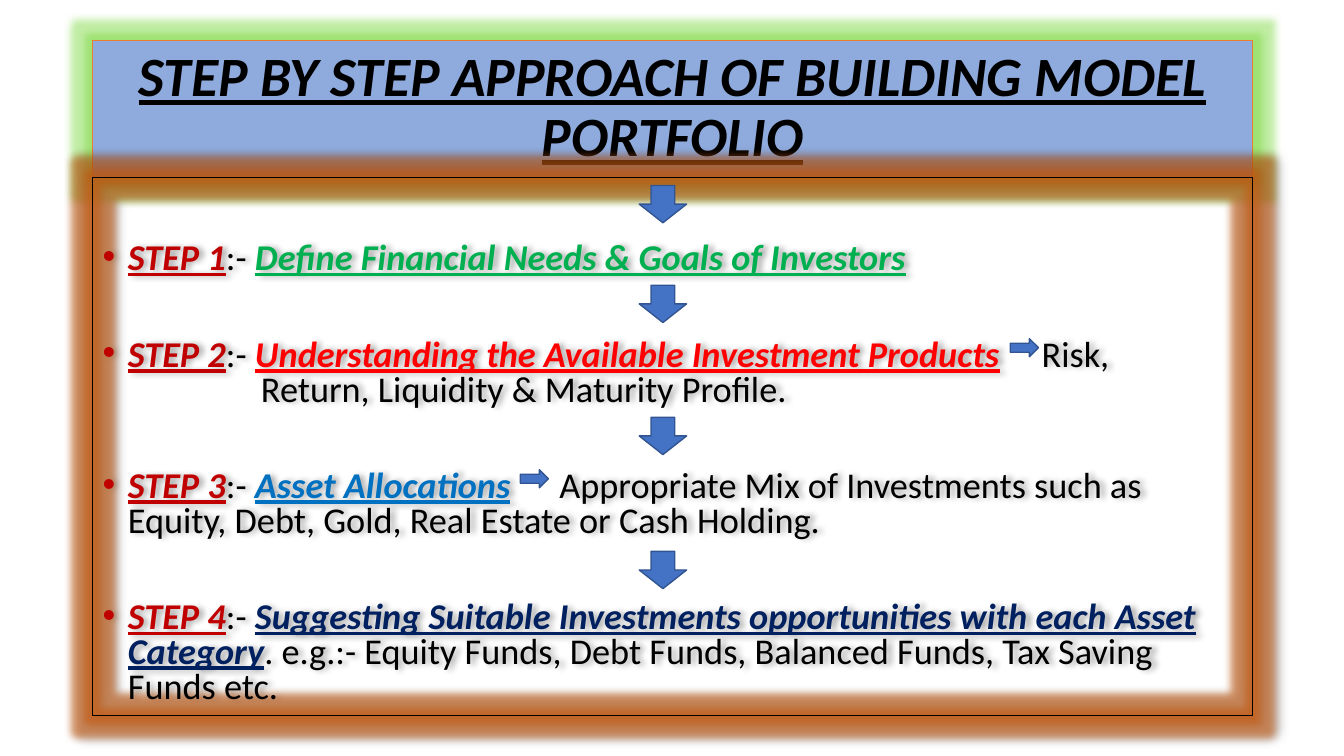
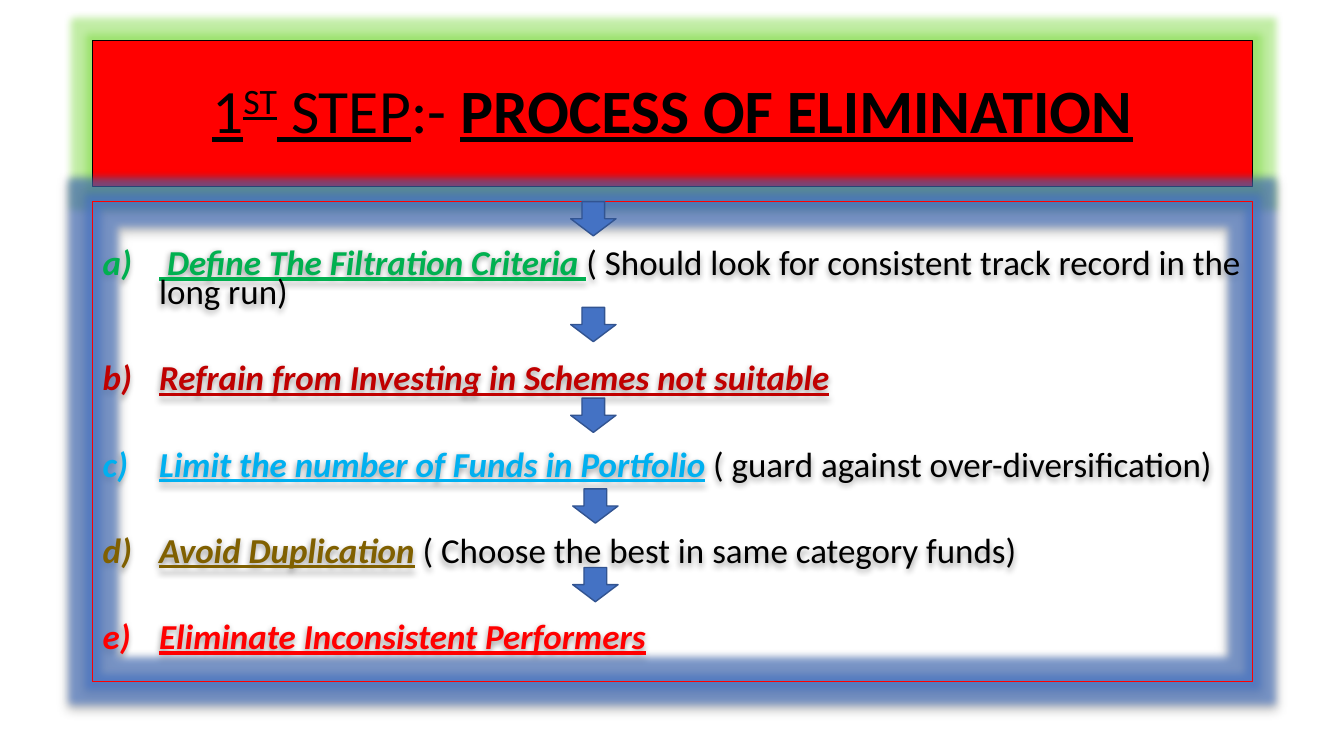
import pptx
import pptx.util
import pptx.dml.color
import pptx.enum.shapes
import pptx.enum.text
import pptx.oxml.ns
from lxml import etree

Inches = pptx.util.Inches
Pt = pptx.util.Pt
RGB = pptx.dml.color.RGBColor
KIND = pptx.enum.shapes.MSO_SHAPE
ALIGN = pptx.enum.text.PP_ALIGN
ANCHOR = pptx.enum.text.MSO_ANCHOR
qn = pptx.oxml.ns.qn

BLACK = RGB(0x00, 0x00, 0x00)
PALE = RGB(0x8F, 0xAA, 0xDC)
ORANGE = RGB(0xED, 0x7D, 0x31)
RUST = RGB(0xC5, 0x5A, 0x11)
LIME = RGB(0x67, 0xD3, 0x21)
BLUE = RGB(0x44, 0x72, 0xC4)
EDGE = RGB(0x32, 0x54, 0x91)
RED = RGB(0xFF, 0x00, 0x00)
MAROON = RGB(0xC0, 0x00, 0x00)
GREEN = RGB(0x00, 0xB0, 0x50)
AZURE = RGB(0x00, 0x70, 0xC0)
NAVY = RGB(0x00, 0x20, 0x60)
SKY = RGB(0x00, 0xB0, 0xF0)
OLIVE = RGB(0x80, 0x60, 0x00)

FONT = "Calibri"
LEFT, TOP, WIDTH = 0.92, 0.4, 11.5
PLAIN = {"bold": False, "italic": False, "underline": False}
LINED = {"underline": True}
HEAVY = {"bold": True, "underline": True}
STRONG = {"bold": True, "italic": True, "underline": True}
DOT = ("buChar", {"char": "•"})
LETTER = ("buAutoNum", {"type": "alphaLcParenR"})


def add_node(parent, tag, **attrs):
    node = etree.SubElement(parent, qn("a:" + tag))
    for key, value in attrs.items():
        node.set(key, str(value))
    return node


def add_tint(parent, color, alpha):
    tint = add_node(parent, "srgbClr", val=color)
    add_node(tint, "alpha", val=alpha * 1000)


def add_glow(shape, color, alpha, angle=None):
    effects = add_node(shape._element.spPr, "effectLst")
    add_tint(add_node(effects, "glow", rad=Pt(11)), color, alpha)
    if angle is not None:
        shade = add_node(effects, "outerShdw", blurRad=Pt(4), dist=Pt(3),
                         dir=angle * 60000, algn="ctr", rotWithShape=0)
        add_tint(shade, BLACK, 40)


def add_box(slide, kind, area, line, width, fill=None):
    shape = slide.shapes.add_shape(kind, *map(Inches, area))
    if fill is None:
        shape.fill.background()
    else:
        shape.fill.solid()
        shape.fill.fore_color.rgb = fill
    shape.line.color.rgb = line
    shape.line.width = Pt(width)
    return shape


def add_run(para, size, text, color=BLACK, style=PLAIN, **marks):
    run = para.add_run()
    run.text = text
    look = {"name": FONT, "size": Pt(size), **style}
    for key, value in look.items():
        setattr(run.font, key, value)
    run.font.color.rgb = color
    for key, value in marks.items():
        run.font._element.set(key, str(value))


def add_gap(para, size, points):
    add_run(para, size, " ", spc=points * 100)


def add_title(slide, height, fill, line, size, runs):
    shape = add_box(slide, KIND.RECTANGLE, (LEFT, TOP, WIDTH, height), line, 0.75, fill)
    add_glow(shape, LIME, 40)
    frame = shape.text_frame
    frame.word_wrap = True
    frame.vertical_anchor = ANCHOR.MIDDLE
    para = frame.paragraphs[0]
    para.alignment = ALIGN.CENTER
    para.line_spacing = 0.9
    for text, style, marks in runs:
        add_run(para, size, text, BLACK, style, **marks)


def add_body(slide, top, height, line, glow, angle, inset):
    shape = add_box(slide, KIND.RECTANGLE, (LEFT, top, WIDTH, height), line, 0.75)
    add_glow(shape, glow, 60, angle)
    frame = shape.text_frame
    look = {"word_wrap": True, "vertical_anchor": ANCHOR.TOP, "margin_top": Inches(inset)}
    for key, value in look.items():
        setattr(frame, key, value)
    return frame


def add_para(frame, first, spacing, before, margin, mark=None, color=BLACK):
    para = frame.paragraphs[0] if first else frame.add_paragraph()
    props = para._p.get_or_add_pPr()
    look = {"alignment": ALIGN.LEFT, "line_spacing": spacing,
            "space_before": Pt(0 if first else before)}
    for key, value in look.items():
        setattr(para, key, value)
    props.set("marL", str(Inches(margin)))
    if mark:
        props.set("indent", str(-Inches(margin)))
        add_node(add_node(props, "buClr"), "srgbClr", val=color)
        if mark is DOT:
            add_node(props, "buFont", typeface="Arial")
        add_node(props, mark[0], **mark[1])
    return para


def add_arrows(slide, kind, size, spots):
    for spot in spots:
        add_box(slide, kind, (*spot, *size), EDGE, 1, BLUE)


def build_steps(slide):
    size = 25.9
    add_title(slide, 1.36, PALE, ORANGE, 39.6,
              [("STEP BY STEP APPROACH OF BUILDING MODEL PORTFOLIO", STRONG, {})])
    frame = add_body(slide, 1.76, 5.34, BLACK, RUST, 0, 0.65)
    steps = [
        ("Define Financial Needs & Goals of Investors", GREEN, 0, "", ""),
        ("Understanding the Available Investment Products", RED, 24, "Risk,",
         "Return, Liquidity & Maturity Profile."),
        ("Asset Allocations", AZURE, 29, "Appropriate Mix of Investments such as "
         "Equity, Debt, Gold, Real Estate or Cash Holding.", ""),
        ("Suggesting Suitable Investments opportunities with each Asset Category", NAVY, 0,
         ". e.g.:- Equity Funds, Debt Funds, Balanced Funds, Tax Saving Funds etc.", ""),
    ]
    for index, (head, color, gap, tail, more) in enumerate(steps):
        para = add_para(frame, index == 0, 0.8, 44, 0.25, DOT, MAROON)
        add_run(para, size, f"STEP {index + 1}", MAROON, STRONG)
        add_run(para, size, ":- ")
        add_run(para, size, head, color, STRONG)
        if gap:
            add_gap(para, size, gap)
        if tail:
            add_run(para, size, tail)
        if more:
            add_run(add_para(frame, False, 0.8, 0, 1.57), size, more)
    add_arrows(slide, KIND.DOWN_ARROW, (0.47, 0.37),
               [(6.34, top) for top in (1.84, 2.83, 4.14, 5.47)])
    add_arrows(slide, KIND.RIGHT_ARROW, (0.28, 0.18), [(10.02, 3.36), (5.16, 4.66)])


def build_filter(slide):
    size = 25
    add_title(slide, 1.45, RED, BLACK, 44, [
        ("1", LINED, {}), ("ST", LINED, {"baseline": 30000}), (" STEP", LINED, {}),
        (":- ", PLAIN, {}), ("PROCESS OF ELIMINATION", HEAVY, {})])
    frame = add_body(slide, 2, 4.76, RED, BLUE, 90, 0.5)
    rules = [
        (" Define The Filtration Criteria ", GREEN,
         "( Should look for consistent track record in the long run)"),
        ("Refrain from Investing in Schemes not suitable", MAROON, ""),
        ("Limit the number of Funds in Portfolio", SKY, " ( guard against over-diversification)"),
        ("Avoid Duplication", OLIVE, " ( Choose the best in same category funds)"),
        ("Eliminate Inconsistent Performers", RED, ""),
    ]
    for index, (head, color, tail) in enumerate(rules):
        para = add_para(frame, index == 0, 0.7, 40.5, 0.56, LETTER, color)
        add_run(para, size, head, color, STRONG)
        if tail:
            add_run(para, size, tail)
    add_arrows(slide, KIND.DOWN_ARROW, (0.45, 0.34),
               [(5.66, 2), (5.66, 3.05), (5.66, 3.95), (5.68, 4.85), (5.68, 5.63)])


def main():
    deck = pptx.Presentation()
    deck.slide_width = Inches(13.33)
    deck.slide_height = Inches(7.5)
    for build in (build_steps, build_filter):
        build(deck.slides.add_slide(deck.slide_layouts[6]))
    for slide in deck.slides:
        for shape in slide.shapes:
            if shape._element.spPr.find(qn("a:effectLst")) is None:
                shape.shadow.inherit = False
    deck.save("out.pptx")


if __name__ == "__main__":
    main()
